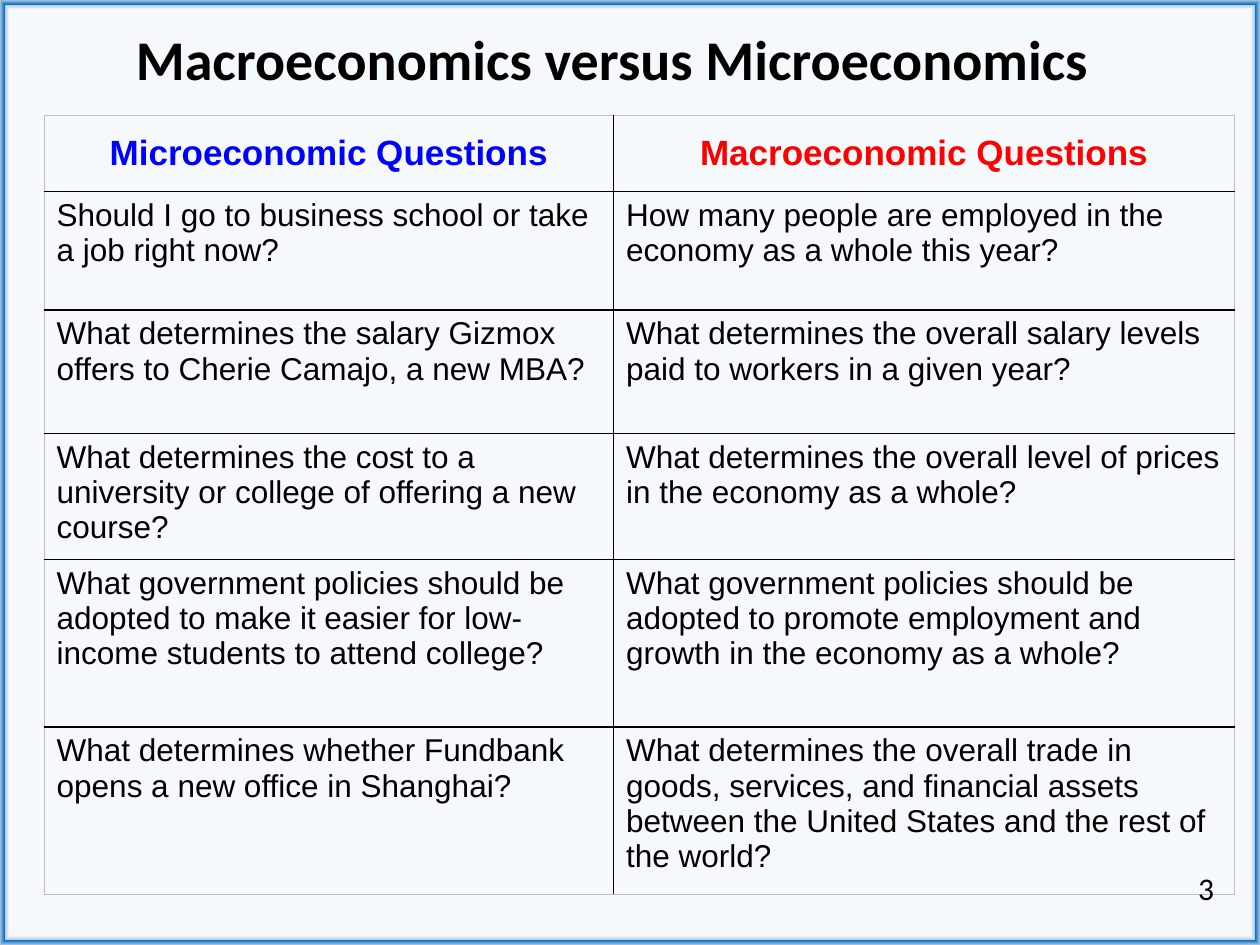
import pptx
import pptx.util
import pptx.dml.color
import pptx.enum.text
import pptx.oxml
import pptx.oxml.ns

Inches, Pt = pptx.util.Inches, pptx.util.Pt
RGBColor = pptx.dml.color.RGBColor
ANCHOR = pptx.enum.text.MSO_ANCHOR
ALIGN = pptx.enum.text.PP_ALIGN
qn = pptx.oxml.ns.qn

WIDTH, HEIGHT = 10, 7.5
BLACK = RGBColor(0x00, 0x00, 0x00)
BLUE = RGBColor(0x00, 0x00, 0xFF)
RED = RGBColor(0xFF, 0x00, 0x00)
GREY = RGBColor(0xBF, 0xBF, 0xBF)
PALE = RGBColor(0xF6, 0xF9, 0xFC)
MIST = RGBColor(0xB0, 0xC6, 0xE1)
OCEAN = RGBColor(0x00, 0x70, 0xC0)

FRAME_STOPS = [(98, PALE), (99, MIST), (99, OCEAN), (100, MIST)]
COLUMN_WIDTHS = [4.52, 4.93]
ROW_HEIGHTS = [0.6, 0.94, 0.98, 0.98, 1.33, 1.33]
HEADINGS = [("Microeconomic Questions", BLUE), ("Macroeconomic Questions", RED)]
QUESTIONS = [
    ("Should I go to business school or take a job right now?",
     "How many people are employed in the economy as a whole this year?"),
    ("What determines the salary Gizmox offers to Cherie Camajo, a new MBA?",
     "What determines the overall salary levels paid to workers in a given year?"),
    ("What determines the cost to a university or college of offering a new course?",
     "What determines the overall level of prices in the economy as a whole?"),
    ("What government policies should be adopted to make it easier for "
     "low-income students to attend college?",
     "What government policies should be adopted to promote employment and "
     "growth in the economy as a whole?"),
    ("What determines whether Fundbank opens a new office in Shanghai?",
     "What determines the overall trade in goods, services, and financial assets "
     "between the United States and the rest of the world?"),
]

TITLE_FORMAT = {"name": "Calibri", "size": Pt(32), "bold": True}
HEADING_FORMAT = {"name": "Arial", "size": Pt(20), "bold": True}
QUESTION_FORMAT = {"name": "Arial", "size": Pt(18), "bold": False}
NUMBER_FORMAT = {"name": "Calibri", "size": Pt(18), "bold": False}


def write(text_frame, text, font_format, color=BLACK, align=ALIGN.LEFT):
    paragraph = text_frame.paragraphs[0]
    paragraph.alignment = align
    run = paragraph.add_run()
    run.text = text
    for name, value in font_format.items():
        setattr(run.font, name, value)
    run.font.color.rgb = color


def paint_background(slide):
    """Fill the slide with a pale centre and a narrow blue frame."""
    slide.background.fill.solid()
    properties = slide.element.find(".//" + qn("p:bgPr"))
    stops = "".join(
        f'<a:gs pos="{share * 1000}"><a:srgbClr val="{color}"/></a:gs>'
        for share, color in FRAME_STOPS)
    gradient = pptx.oxml.parse_xml(
        f'<a:gradFill {pptx.oxml.ns.nsdecls("a")} rotWithShape="1">'
        f'<a:gsLst>{stops}</a:gsLst><a:path path="shape">'
        '<a:fillToRect l="50000" t="50000" r="50000" b="50000"/></a:path></a:gradFill>')
    properties.replace(properties.find(qn("a:solidFill")), gradient)


def add_text(slide, box, text, font_format, anchor):
    shape = slide.shapes.add_textbox(*map(Inches, box))
    shape.text_frame.word_wrap = True
    shape.text_frame.vertical_anchor = anchor
    write(shape.text_frame, text, font_format)


def draw_borders(cell, outer_sides):
    properties = cell._tc.get_or_add_tcPr()
    for index, side in enumerate("LRTB"):
        color, points = (GREY, 0.75) if side in outer_sides else (BLACK, 1)
        border = pptx.oxml.parse_xml(
            f'<a:ln{side} {pptx.oxml.ns.nsdecls("a")} w="{Pt(points)}">'
            f'<a:solidFill><a:srgbClr val="{color}"/></a:solidFill></a:ln{side}>')
        properties.insert(index, border)


def add_questions(slide, box):
    """Place the comparison table, sharing the box out by column and row."""
    left, top, width, height = box
    rows, columns = len(ROW_HEIGHTS), len(COLUMN_WIDTHS)
    table = slide.shapes.add_table(rows, columns, *map(Inches, box)).table
    table.first_row = table.horz_banding = False
    for column, share in zip(table.columns, COLUMN_WIDTHS):
        column.width = Inches(width * share / sum(COLUMN_WIDTHS))
    for row, share in zip(table.rows, ROW_HEIGHTS):
        row.height = Inches(height * share / sum(ROW_HEIGHTS))

    for column, (heading, color) in enumerate(HEADINGS):
        cell = table.cell(0, column)
        cell.vertical_anchor = ANCHOR.MIDDLE
        write(cell.text_frame, heading, HEADING_FORMAT, color, ALIGN.CENTER)
    for row, pair in enumerate(QUESTIONS, start=1):
        for column, question in enumerate(pair):
            write(table.cell(row, column).text_frame, question, QUESTION_FORMAT)

    for row in range(rows):
        for column in range(columns):
            cell = table.cell(row, column)
            cell.fill.background()
            edges = {"L": column == 0, "R": column == columns - 1,
                     "T": row == 0, "B": row == rows - 1}
            draw_borders(cell, [side for side, outer in edges.items() if outer])


def main():
    presentation = pptx.Presentation()
    presentation.slide_width, presentation.slide_height = Inches(WIDTH), Inches(HEIGHT)
    slide = presentation.slides.add_slide(presentation.slide_layouts[6])
    paint_background(slide)
    add_text(slide, (0.98, 0.17, 8.82, 0.58), "Macroeconomics versus Microeconomics",
             TITLE_FORMAT, ANCHOR.MIDDLE)
    add_questions(slide, (0.35, 0.92, sum(COLUMN_WIDTHS), sum(ROW_HEIGHTS)))
    add_text(slide, (9.41, 6.85, 0.58, 0.4), "3", NUMBER_FORMAT, ANCHOR.TOP)
    presentation.save("out.pptx")


if __name__ == "__main__":
    main()
